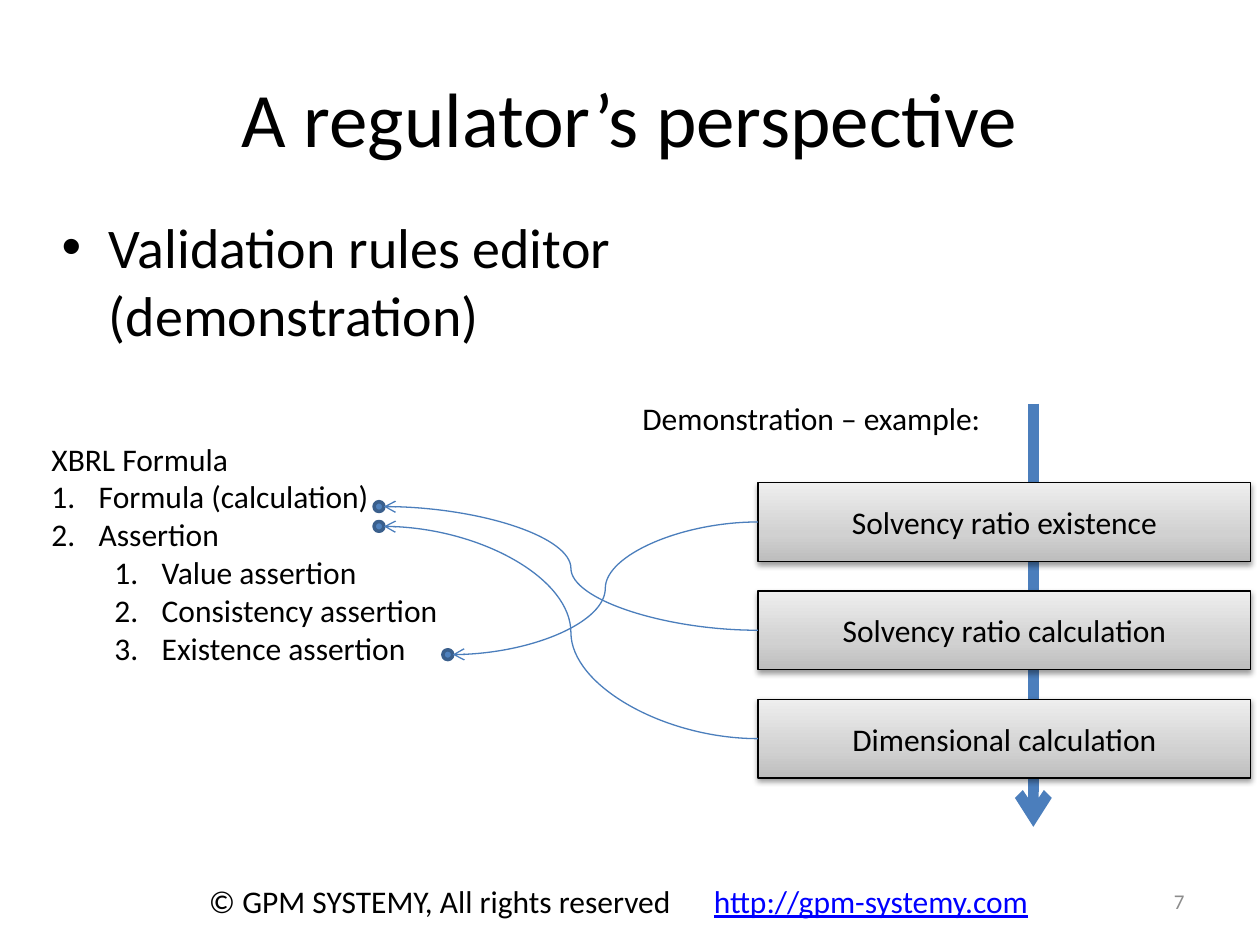
from pptx import Presentation, oxml
from pptx.dml.color import RGBColor
from pptx.enum import shapes, text
from pptx.oxml import ns
from pptx.util import Pt

COLORS = {"text": "000000", "link": "0000FF", "number": "8C8C8C", "arrow": "4B7EBC",
          "dot": "4F81BD", "dot_line": "3A5F8C"}
COLORS = {part: RGBColor.from_string(value) for part, value in COLORS.items()}
A = ns.nsdecls("a")


def add_text(left, top, width, height, lines, size=18, color="text"):
    box = slide.shapes.add_textbox(Pt(left), Pt(top), Pt(width), Pt(height))
    frame = box.text_frame
    frame.word_wrap = True
    frame.text = lines
    for paragraph in frame.paragraphs:
        for run in paragraph.runs:
            run.font.name = "Calibri"
            run.font.size = Pt(size)
            run.font.color.rgb = COLORS[color]
    return frame


def add_arrow(kind, x1, y1, x2, y2, weight):
    arrow = slide.shapes.add_connector(kind, Pt(x1), Pt(y1), Pt(x2), Pt(y2))
    arrow.line.color.rgb = COLORS["arrow"]
    arrow.line.width = Pt(weight)
    arrow.line._get_or_add_ln().append(oxml.parse_xml(f'<a:tailEnd {A} type="arrow"/>'))
    arrow._element.spPr.append(oxml.parse_xml(f"<a:effectLst {A}/>"))


prs = Presentation()
prs.slide_width, prs.slide_height = Pt(720), Pt(540)
slide = prs.slides.add_slide(prs.slide_layouts[1])

# Title and main bullet
title, body = slide.placeholders
title.left, title.top, title.width, title.height = Pt(36), Pt(21.6), Pt(648), Pt(90)
title.text_frame.text = "A regulator’s perspective"
body.left, body.top, body.width, body.height = Pt(28), Pt(118), Pt(382), Pt(118)
body.text_frame.text = "Validation rules editor\v(demonstration)"
for placeholder, size in ((title, 44), (body, 32)):
    for run in placeholder.text_frame.paragraphs[0].runs:
        run.font.name = "Calibri"
        run.font.size = Pt(size)
        run.font.color.rgb = COLORS["text"]

# Footer: copyright, address and page number
footer = add_text(112.3, 500.4, 488, 29, "© GPM SYSTEMY, All rights reserved\t").paragraphs[0]
footer._p.get_or_add_pPr().append(oxml.parse_xml(
    f'<a:tabLst {A}><a:tab pos="{Pt(288.5)}" algn="l"/></a:tabLst>'))
address = footer.add_run()
address.text = "http://gpm-systemy.com"
address.font.name = "Calibri"
address.font.size = Pt(18)
address.font.underline = True
address.font.color.rgb = COLORS["link"]
number = add_text(516, 500.4, 168, 28.8, "7", 12, "number")
number.vertical_anchor = text.MSO_ANCHOR.MIDDLE
number.paragraphs[0].alignment = text.PP_ALIGN.RIGHT

# Numbered outline of formula types
outline = add_text(22.3, 247.7, 250, 138, "\n".join([
    "XBRL Formula", "Formula (calculation)", "Assertion",
    "Value assertion", "Consistency assertion", "Existence assertion"]))
for paragraph, level in zip(outline.paragraphs[1:], (0, 0, 1, 1, 1)):
    paragraph.level = level
    props = paragraph._p.get_or_add_pPr()
    props.set("marL", str(Pt(27 + 36 * level)))
    props.set("indent", str(Pt(-27)))
    props.append(oxml.parse_xml(f'<a:buFont {A} typeface="+mj-lt"/>'))
    props.append(oxml.parse_xml(f'<a:buAutoNum {A} type="arabicPeriod"/>'))

# Process arrow running behind the steps
add_text(360, 224.6, 212, 29, "Demonstration – example:")
add_arrow(shapes.MSO_CONNECTOR.STRAIGHT, 590.5, 230.6, 590.5, 472.5, 6)

# Steps, each linked to a dot beside its outline entry
STEP_LEFT, STEP_TOP, STEP_PITCH, STEP_HEIGHT, DOT = 433.2, 275.8, 61.9, 45, 5.6
steps = [("Solvency ratio existence", 253.1, 371.3),
         ("Solvency ratio calculation", 213.8, 286.7),
         ("Dimensional calculation", 213.8, 298)]
gradient = "".join(f'<a:gs pos="{pos}000"><a:srgbClr val="{tone}"/></a:gs>'
                   for pos, tone in ((0, "BDBDBD"), (35, "D1D1D1"), (100, "EEEEEE")))
for i, (label, dot_left, dot_top) in enumerate(steps):
    top = STEP_TOP + i * STEP_PITCH
    step = slide.shapes.add_shape(shapes.MSO_SHAPE.RECTANGLE, Pt(STEP_LEFT), Pt(top),
                                  Pt(281.6), Pt(STEP_HEIGHT))
    step.line.color.rgb = COLORS["text"]
    step.line.width = Pt(0.75)
    step._element.spPr.insert(2, oxml.parse_xml(
        f'<a:gradFill {A} rotWithShape="1"><a:gsLst>{gradient}</a:gsLst>'
        '<a:lin ang="16200000" scaled="0"/></a:gradFill>'))
    step._element.spPr.append(oxml.parse_xml(
        f'<a:effectLst {A}><a:outerShdw blurRad="40000" dist="20000" dir="5400000" '
        'rotWithShape="0"><a:srgbClr val="000000"><a:alpha val="38000"/></a:srgbClr>'
        '</a:outerShdw></a:effectLst>'))
    step.text_frame.text = label
    step.text_frame.vertical_anchor = text.MSO_ANCHOR.MIDDLE
    caption = step.text_frame.paragraphs[0]
    caption.alignment = text.PP_ALIGN.CENTER
    caption.runs[0].font.name = "Calibri"
    caption.runs[0].font.size = Pt(18)
    caption.runs[0].font.color.rgb = COLORS["text"]

    dot = slide.shapes.add_shape(shapes.MSO_SHAPE.OVAL, Pt(dot_left), Pt(dot_top),
                                 Pt(DOT), Pt(DOT))
    dot.shadow.inherit = False
    dot.fill.solid()
    dot.fill.fore_color.rgb = COLORS["dot"]
    dot.line.color.rgb = COLORS["dot_line"]
    dot.line.width = Pt(2)
    add_arrow(shapes.MSO_CONNECTOR.CURVE, STEP_LEFT, top + STEP_HEIGHT / 2,
              dot_left + DOT, dot_top + DOT / 2, 0.75)

prs.save("out.pptx")
